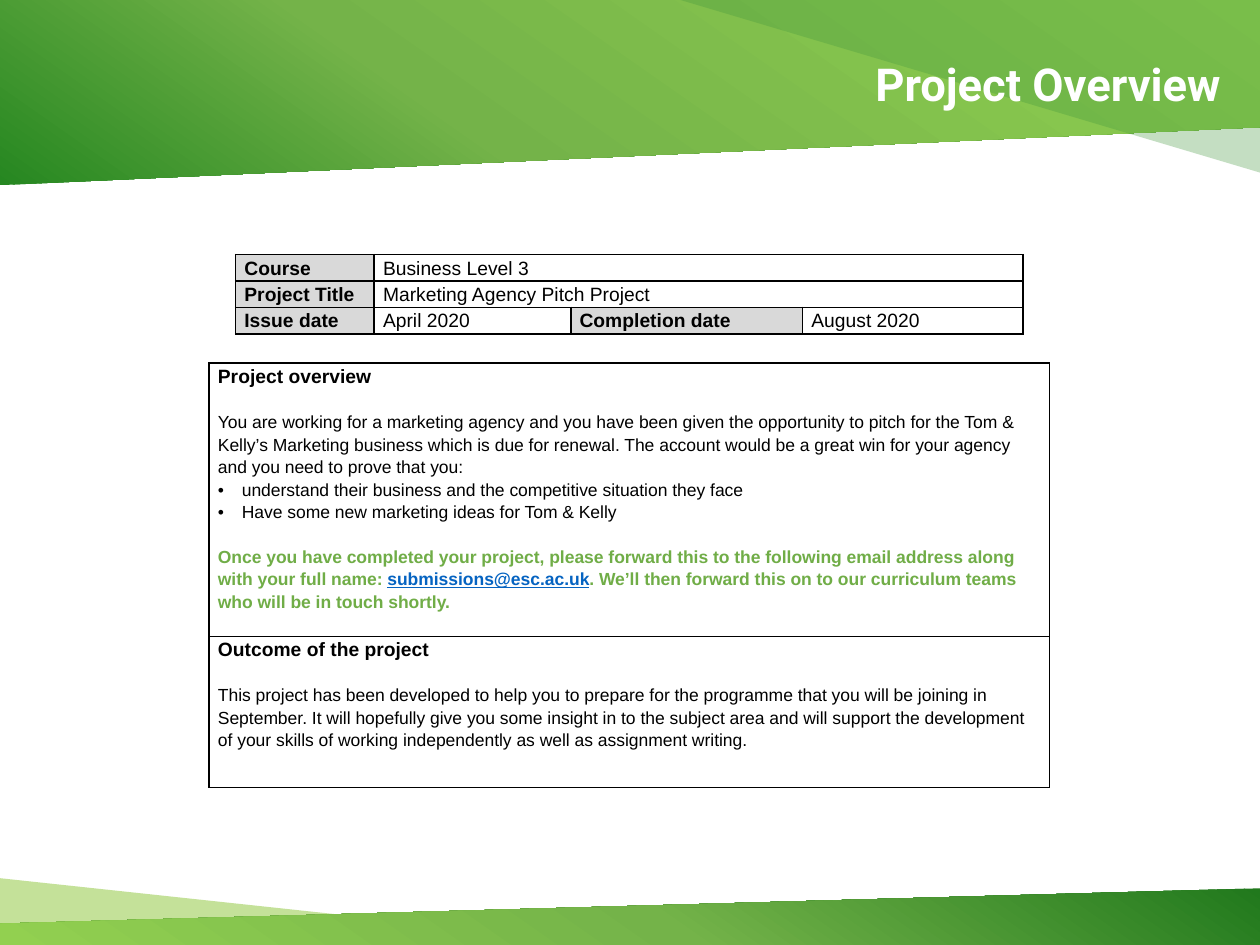
from lxml import etree
from pptx import Presentation
from pptx.dml.color import RGBColor
from pptx.enum.text import MSO_ANCHOR, PP_ALIGN
from pptx.oxml import parse_xml
from pptx.oxml.ns import nsdecls, qn
from pptx.util import Inches, Pt

HEADING = {"size": Pt(11), "bold": True}
BODY = {"size": Pt(10), "bold": False}
NOTICE = {"size": Pt(10), "bold": True}
BLACK, GREEN, BLUE, GREY = "000000", "70AD47", "0563C1", "D9D9D9"
BLANK_LINE = 12.8
BULLET_INDENT = Inches(0.19)

BANDS = [
    {"points": [(0, 6.97), (4.94, 7.5), (0, 7.5)], "color": "94C947", "alpha": 55},
    {"points": [(0, 7.33), (10, 7.05), (10, 7.5), (0, 7.5)],
     "stops": [(0, "21791D"), (48, "74B349"), (100, "92D050")], "angle": 125},
    {"points": [(10, 1.01), (0, 1.47), (0, 0), (10, 0)],
     "stops": [(0, "268721"), (36, "74B349"), (100, "92D050")], "angle": 305},
    {"points": [(10, 1.37), (5.4, 0), (10, 0)], "color": "43973D", "alpha": 31},
]

DETAILS = [
    ["Course", "Business Level 3"],
    ["Project Title", "Marketing Agency Pitch Project"],
    ["Issue date", "April 2020", "Completion date", "August 2020"],
]

SECTIONS = [
    [
        {"runs": [("Project overview", HEADING, BLACK)]},
        {"runs": [("You are working for a marketing agency and you have been given the "
                   "opportunity to pitch for the Tom & Kelly’s Marketing business which is due "
                   "for renewal. The account would be a great win for your agency and you need "
                   "to prove that you:", BODY, BLACK)], "before": BLANK_LINE},
        {"runs": [("understand their business and the competitive situation they face",
                   BODY, BLACK)], "bullet": True},
        {"runs": [("Have some new marketing ideas for Tom & Kelly", BODY, BLACK)],
         "bullet": True},
        {"runs": [
            ("Once you have completed your project, please forward this to the following "
             "email address along with your full name: ", NOTICE, GREEN),
            ("submissions@esc.ac.uk", {**NOTICE, "underline": True}, BLUE),
            (". We’ll then forward this on to our curriculum teams who will be in touch "
             "shortly.", NOTICE, GREEN)], "before": BLANK_LINE},
    ],
    [
        {"runs": [("Outcome of the project", HEADING, BLACK)]},
        {"runs": [("This project has been developed to help you to prepare for the programme "
                   "that you will be joining in September. It will hopefully give you some "
                   "insight in to the subject area and will support the development of your "
                   "skills of working independently as well as assignment writing.",
                   BODY, BLACK)], "before": BLANK_LINE},
    ],
]


def rgb(value):
    return RGBColor.from_string(value)


def draw_band(slide, band):
    points = [(Inches(x), Inches(y)) for x, y in band["points"]]
    builder = slide.shapes.build_freeform(*points[0])
    builder.add_line_segments(points[1:], close=True)
    shape = builder.convert_to_shape()
    shape.shadow.inherit = False
    shape.line.fill.background()
    if "stops" in band:
        stops = "".join(f'<a:gs pos="{position * 1000}"><a:srgbClr val="{color}"/></a:gs>'
                        for position, color in band["stops"])
        gradient = parse_xml(
            f'<a:gradFill {nsdecls("a")} rotWithShape="1"><a:gsLst>{stops}</a:gsLst>'
            f'<a:lin ang="{band["angle"] * 60000}" scaled="0"/></a:gradFill>')
        shape._element.spPr.find(qn("a:custGeom")).addnext(gradient)
    else:
        shape.fill.solid()
        shape.fill.fore_color.rgb = rgb(band["color"])
        color = shape._element.spPr.find(qn("a:solidFill"))[0]
        etree.SubElement(color, qn("a:alpha"), val=str(band["alpha"] * 1000))


def format_cell(cell, fill=None):
    cell.margin_left = cell.margin_right = Inches(0.07)
    cell.margin_top = cell.margin_bottom = 0
    properties = cell._tc.get_or_add_tcPr()
    for side in ("lnL", "lnR", "lnT", "lnB"):
        properties.append(parse_xml(
            f'<a:{side} {nsdecls("a")} w="12700"><a:solidFill>'
            f'<a:srgbClr val="{BLACK}"/></a:solidFill></a:{side}>'))
    if fill:
        cell.fill.solid()
        cell.fill.fore_color.rgb = rgb(fill)
    else:
        cell.fill.background()


def write_paragraphs(frame, paragraphs):
    for index, content in enumerate(paragraphs):
        paragraph = frame.add_paragraph() if index else frame.paragraphs[0]
        paragraph.line_spacing = 1.15
        if "before" in content:
            paragraph.space_before = Pt(content["before"])
        if content.get("bullet"):
            properties = paragraph._p.get_or_add_pPr()
            properties.set("marL", str(BULLET_INDENT))
            properties.set("indent", str(-BULLET_INDENT))
            etree.SubElement(properties, qn("a:buFont"), typeface="Arial")
            etree.SubElement(properties, qn("a:buChar"), char="•")
        for text, style, color in content["runs"]:
            run = paragraph.add_run()
            run.text = text
            for name, value in {"name": "Arial", **style}.items():
                setattr(run.font, name, value)
            run.font.color.rgb = rgb(color)


def add_grid(slide, left, top, widths, heights):
    table = slide.shapes.add_table(
        len(heights), len(widths), Inches(left), Inches(top),
        Inches(sum(widths)), Inches(sum(heights))).table
    table.first_row = table.horz_banding = False
    for column, width in zip(table.columns, widths):
        column.width = Inches(width)
    for row, height in zip(table.rows, heights):
        row.height = Inches(height)
    return table


def main():
    presentation = Presentation()
    presentation.slide_width, presentation.slide_height = Inches(10), Inches(7.5)
    slide = presentation.slides.add_slide(presentation.slide_layouts[5])
    for band in BANDS:
        draw_band(slide, band)

    title = slide.shapes.title
    slide.shapes._spTree.append(title._element)
    title.left, title.top = Inches(1.88), Inches(0.38)
    title.width, title.height = Inches(7.91), Inches(0.62)
    title.text_frame.text = "Project Overview"
    title.text_frame.vertical_anchor = MSO_ANCHOR.MIDDLE
    heading = title.text_frame.paragraphs[0]
    heading.alignment, heading.line_spacing = PP_ALIGN.RIGHT, 0.9
    for name, value in {"name": "Roboto", "size": Pt(25.9), "bold": True}.items():
        setattr(heading.runs[0].font, name, value)
    heading.runs[0].font.color.rgb = rgb("FFFFFF")

    overview = add_grid(slide, 1.66, 2.88, [6.67], [2.17, 1.2])
    for row, paragraphs in enumerate(SECTIONS):
        format_cell(overview.cell(row, 0))
        write_paragraphs(overview.cell(row, 0).text_frame, paragraphs)

    details = add_grid(slide, 1.87, 2.02, [1.1, 1.56, 1.84, 1.75], [0.21] * 3)
    for row, values in enumerate(DETAILS):
        for column in range(4):
            is_label = column < len(values) and column % 2 == 0
            format_cell(details.cell(row, column), GREY if is_label else None)
        if len(values) == 2:
            details.cell(row, 1).merge(details.cell(row, 3))
        for column, value in enumerate(values):
            style = {**HEADING, "bold": column % 2 == 0}
            write_paragraphs(details.cell(row, column).text_frame,
                             [{"runs": [(value, style, BLACK)]}])

    presentation.save("out.pptx")


if __name__ == "__main__":
    main()
